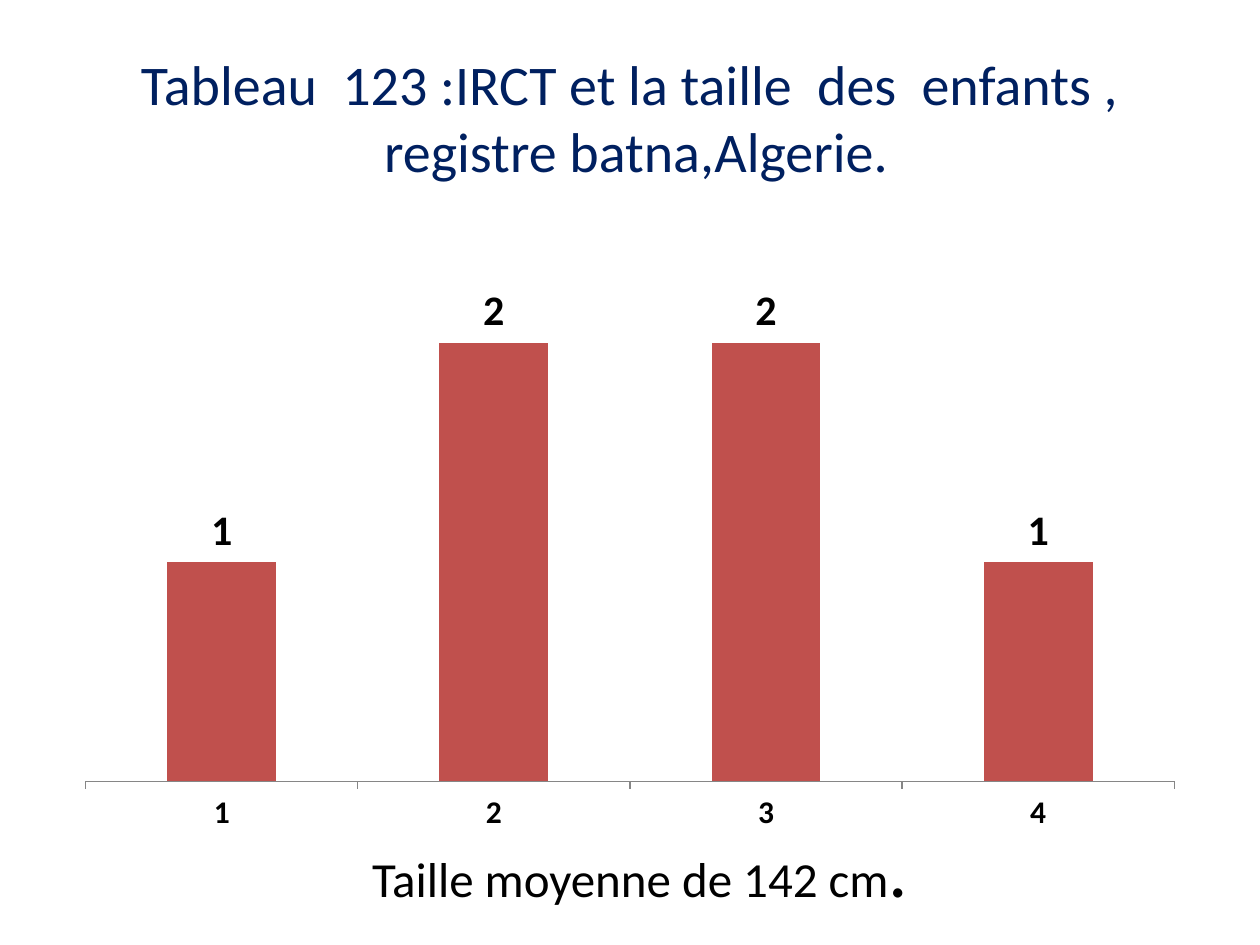
from pptx import Presentation
from pptx.chart.data import CategoryChartData
from pptx.dml.color import RGBColor
from pptx.enum.chart import XL_CHART_TYPE, XL_LABEL_POSITION, XL_TICK_MARK
from pptx.enum.text import MSO_ANCHOR, PP_ALIGN
from pptx.util import Inches, Pt

COLORS = {"title": "002060", "text": "000000", "bar": "C0504D", "axis": "868686"}


class SlideBuilder:
    font_name = "Calibri"

    def __init__(self, slide):
        self.slide = slide

    def style_font(self, font, size, color, bold=False):
        font.name = self.font_name
        font.size = Pt(size)
        font.bold = bold
        font.color.rgb = RGBColor.from_string(COLORS[color])

    def text(self, left, top, width, height, lines, color):
        box = self.slide.shapes.add_textbox(
            Inches(left), Inches(top), Inches(width), Inches(height))
        frame = box.text_frame
        frame.word_wrap = True
        frame.vertical_anchor = MSO_ANCHOR.MIDDLE
        for index, runs in enumerate(lines):
            paragraph = frame.add_paragraph() if index else frame.paragraphs[0]
            paragraph.alignment = PP_ALIGN.CENTER
            for wording, size in runs:
                run = paragraph.add_run()
                run.text = wording
                self.style_font(run.font, size, color)

    def column_chart(self, left, top, width, height, categories, values):
        data = CategoryChartData()
        data.categories = categories
        data.add_series("Series 1", values)
        chart = self.slide.shapes.add_chart(
            XL_CHART_TYPE.COLUMN_CLUSTERED, Inches(left), Inches(top),
            Inches(width), Inches(height), data).chart
        chart.has_legend = False
        chart.has_title = False
        self.style_font(chart.font, 10, "text")

        height_axis = chart.value_axis
        height_axis.visible = False
        height_axis.has_major_gridlines = False
        height_axis.minimum_scale = 0
        height_axis.maximum_scale = 2.5

        group_axis = chart.category_axis
        group_axis.major_tick_mark = XL_TICK_MARK.OUTSIDE
        group_axis.format.line.color.rgb = RGBColor.from_string(COLORS["axis"])
        self.style_font(group_axis.tick_labels.font, 18, "text", bold=True)

        plot = chart.plots[0]
        plot.gap_width = 150
        plot.vary_by_categories = False
        columns = plot.series[0]
        columns.format.fill.solid()
        columns.format.fill.fore_color.rgb = RGBColor.from_string(COLORS["bar"])
        labels = columns.data_labels
        labels.show_value = True
        labels.position = XL_LABEL_POSITION.OUTSIDE_END
        self.style_font(labels.font, 24, "text", bold=True)


def main():
    presentation = Presentation()
    presentation.slide_width = Inches(10)
    presentation.slide_height = Inches(7.5)
    builder = SlideBuilder(
        presentation.slides.add_slide(presentation.slide_layouts[6]))
    builder.column_chart(0.5, 1.75, 9, 4.95, ["1", "2", "3", "4"], [1, 2, 2, 1])
    builder.text(0.5, 0.3, 9, 1.25, [
        [("Tableau  123 :IRCT et la taille  des  enfants ,", 32)],
        [(" registre batna,Algerie.", 32)],
    ], "title")
    builder.text(0.58, 6.25, 9, 1.25, [
        [("Taille moyenne de 142 cm", 28), (".", 44)],
    ], "text")
    presentation.save("out.pptx")


if __name__ == "__main__":
    main()
